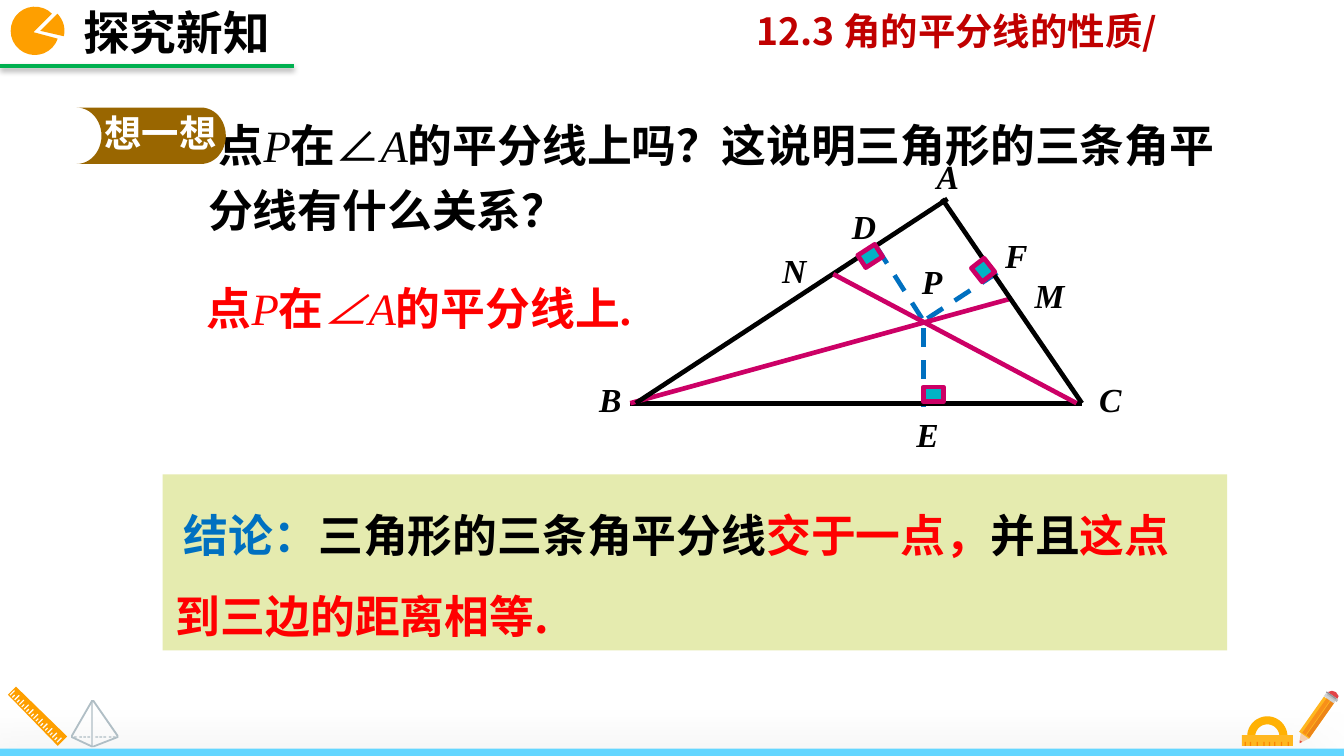
"""Build the lesson slide on the angle bisectors of a triangle."""
from math import cos, radians, sin

from lxml import etree
from pptx import Presentation
from pptx.dml.color import RGBColor
from pptx.enum.dml import MSO_LINE
from pptx.enum.shapes import MSO_CONNECTOR, MSO_SHAPE
from pptx.enum.text import MSO_ANCHOR, MSO_AUTO_SIZE, PP_ALIGN
from pptx.oxml.ns import qn
from pptx.util import Pt

PX = 9144
RECT, STORAGE = MSO_SHAPE.RECTANGLE, MSO_SHAPE.FLOWCHART_STORED_DATA
STRAIGHT, DASH = MSO_CONNECTOR.STRAIGHT, MSO_LINE.DASH
LEFT, TOP, FIXED = PP_ALIGN.LEFT, MSO_ANCHOR.TOP, MSO_AUTO_SIZE.NONE
SANS, SERIF = "Noto Sans CJK SC", "Times New Roman"
BLACK, RED, BLUE, PINK = "000000", "FF0000", "0070C0", "CC0066"
ORANGE, GREY, AMBER = "FE9F00", "B0BEC5", "FFB720"


def paint(shape, fill, edge=None):
    shape.shadow.inherit = False
    shape.fill.solid()
    shape.fill.fore_color.rgb = RGBColor.from_string(fill)
    if edge:
        shape.line.color.rgb = RGBColor.from_string(edge)
        shape.line.width = Pt(2.5)
    else:
        shape.line.fill.background()


def write(box, size, runs, wrap=True, spacing=1.0, indent=0):
    frame = box.text_frame
    frame.word_wrap, frame.auto_size, frame.vertical_anchor = wrap, FIXED, TOP
    paragraph = frame.paragraphs[0]
    paragraph.alignment, paragraph.line_spacing = LEFT, spacing
    paragraph._p.get_or_add_pPr().set("indent", str(indent * PX))
    for text, font, color, style in runs:
        run = paragraph.add_run()
        run.text = text
        run.font.size, run.font.name = Pt(size), font
        run.font.bold, run.font.italic = "b" in style, "i" in style
        run.font.color.rgb = RGBColor.from_string(color)
        etree.SubElement(run._r.get_or_add_rPr(), qn("a:ea"), typeface=SANS)


prs = Presentation()
prs.slide_width = 1000 * PX
prs.slide_height = prs.slide_width * 9 // 16
slide = prs.slides.add_slide(prs.slide_layouts[5])
shapes = slide.shapes

footer = shapes.add_shape(RECT, 0, 557 * PX, 1000 * PX, 6 * PX)
paint(footer, "63D6FF")

arcs = []
for cx, cy, radius, start, end in [
    (943, 548, 15, 180, 360), (943, 548, 9, 360, 180),
    (26, 23, 18, -45, -341), (30, 23, 18, -45, 13),
]:
    angles = [radians(start + (end - start) * step / 24) for step in range(25)]
    arcs.append([(cx + radius * cos(a), cy + radius * sin(a)) for a in angles])
protractor_outer, protractor_inner, pie_body, pie_slice = arcs

ruler = [[(12, 511), (6, 517), (43, 555), (50, 548)]]
for mark in range(21):
    x, y = 7 + 1.75 * mark, 517 + 1.75 * mark
    reach = 2 if mark % 2 else 3.5
    ruler.append([(x, y), (x + reach, y - reach),
                  (x + reach + 0.8, y - reach + 0.8), (x + 0.8, y + 0.8)])
pyramid = [
    [(68, 521), (70, 521), (88, 547), (88, 549), (70, 556), (68, 556), (53, 549), (53, 547)],
    [(69, 522), (87, 548), (69, 555), (54, 548)],
]
pencil_wood = [(967, 551), (968, 551), (969, 552), (975, 549), (974, 547),
               (972, 548), (972, 546), (970, 546), (970, 544), (968, 544)]
for contours, color in [
    ([protractor_outer + protractor_inner], "FFB103"),
    ([[(967, 551), (967, 553), (969, 552), (968, 551)]], "E74C3C"),
    ([pencil_wood], "F4CFB2"),
    ([[(994, 515), (991, 514), (988, 515), (995, 520), (996, 518)]], "E24348"),
    (ruler, ORANGE),
    (pyramid, GREY),
    ([pie_body + [(25, 24)], pie_slice + [(30, 23)]], ORANGE),
]:
    outline = None
    for contour in contours:
        points = [(x * PX, y * PX) for x, y in contour]
        if outline is None:
            outline = shapes.build_freeform(*points[0], scale=1.0)
        else:
            outline.move_to(*points[0])
        outline.add_line_segments(points[1:], close=True)
    paint(outline.convert_to_shape(), color)

bars = [
    (924, 547, 38, 8, 0, AMBER),
    (975, 518, 9, 32, 35.2, AMBER),
    (981, 519, 3, 32, 35.2, "ED8518"),
    (978, 517, 3, 32, 35.2, "F89019"),
    (985, 518, 9, 3, 35.2, "D1D3D4"),
    (987, 518, 9, 2, 35.2, "BCBEC0"),
    (986, 517, 9, 1, 35.2, "939598"),
    (68, 521, 1, 35, 0, GREY),
]
bars += [(round(926 + 4.5 * tick), 552, 1, 3, 0, "FB8501") for tick in range(8)]
bars += [(x, 548, 2, 1, 0, GREY) for x in (55, 59, 62, 65, 71, 74, 77, 81, 84)]
for x, y, width, height, turn, color in bars:
    bar = shapes.add_shape(RECT, x * PX, y * PX, width * PX, height * PX)
    bar.rotation = turn
    paint(bar, color)

heading = shapes.title
heading.left, heading.top, heading.width, heading.height = 52 * PX, -2 * PX, 160 * PX, 52 * PX
write(heading, 25, [("探究新知", SERIF, BLACK, "b")], wrap=False)

chapter = shapes.add_textbox(553 * PX, 1 * PX, 331 * PX, 44 * PX)
write(chapter, 20, [("12.3 角的平分线的性质/", SANS, "C00000", "b")], wrap=False)

question = shapes.add_textbox(145 * PX, 75 * PX, 780 * PX, 107 * PX)
write(question, 24, [
    ("点", SANS, BLACK, "b"), ("P", SERIF, BLACK, "i"), ("在", SANS, BLACK, "b"),
    ("∠", SERIF, BLACK, ""), ("A", SERIF, BLACK, "i"),
    ("的平分线上吗？这说明三角形的三条角平分线有什么关系？", SANS, BLACK, "b"),
], spacing=1.2, indent=8)

answer = shapes.add_textbox(144 * PX, 204 * PX, 356 * PX, 50 * PX)
write(answer, 24, [
    ("点", SERIF, RED, "b"), ("P", SERIF, RED, "i"), ("在", SERIF, RED, "b"),
    ("∠A", SERIF, RED, "i"), ("的平分线上.", SERIF, RED, "b"),
])

conclusion = shapes.add_shape(RECT, 121 * PX, 353 * PX, 792 * PX, 131 * PX)
paint(conclusion, "E5EBAF")
write(conclusion, 24, [
    ("结论：", SANS, BLUE, "b"), ("三角形的三条角平分线", SANS, BLACK, "b"),
    ("交于一点，", SANS, RED, "b"), ("并且", SANS, BLACK, "b"),
    ("这点到三边的距离相等.", SANS, RED, "b"),
], spacing=1.5, indent=6)

for x1, y1, x2, y2, color, weight, dash in [
    (687, 244, 687, 303, BLUE, 2.5, DASH),
    (686, 237, 653, 185, BLUE, 2.5, DASH),
    (690, 237, 742, 203, BLUE, 2.5, DASH),
    (469, 300, 805, 300, BLACK, 2.5, None),
    (469, 300, 753, 222, PINK, 2.5, None),
    (473, 300, 705, 148, BLACK, 2.5, None),
    (701, 148, 805, 300, BLACK, 2.5, None),
    (620, 204, 801, 300, PINK, 2.5, None),
    (0, 49, 219, 49, "00B050", 2, None),
]:
    segment = shapes.add_connector(STRAIGHT, x1 * PX, y1 * PX, x2 * PX, y2 * PX)
    segment.line.color.rgb = RGBColor.from_string(color)
    segment.line.width, segment.line.dash_style = Pt(weight), dash
    etree.SubElement(segment._element.spPr, qn("a:effectLst"))
heading_rule = segment

for letter, x, y in [
    ("A", 687, 111), ("B", 436, 277), ("C", 808, 277), ("D", 624, 148), ("E", 672, 303),
    ("F", 738, 170), ("P", 676, 189), ("N", 572, 181), ("M", 760, 200),
]:
    vertex = shapes.add_textbox(x * PX, y * PX, 49 * PX, 40 * PX)
    write(vertex, 18, [(letter, SERIF, BLACK, "bi")])

for x, y, width, height, turn in [
    (640, 185, 15, 11, 327), (687, 288, 15, 11, 0), (725, 195, 13, 12, 52),
]:
    right_angle = shapes.add_shape(RECT, x * PX, y * PX, width * PX, height * PX)
    right_angle.rotation = turn
    paint(right_angle, "02B3C5", PINK)

badge = shapes.add_shape(STORAGE, 57 * PX, 80 * PX, 111 * PX, 42 * PX)
badge.rotation = 180
paint(badge, "996600")
prompt = shapes.add_textbox(68 * PX, 77 * PX, 156 * PX, 44 * PX)
write(prompt, 20, [("想一想", SANS, "FFFFFF", "b")])

for caster, opacity, blur, distance, direction in [
    (footer, 50, 35, 20, 135), (heading_rule, 38, 3.1, 1.6, 90),
]:
    effects = caster._element.spPr.find(qn("a:effectLst"))
    shadow = etree.SubElement(effects, qn("a:outerShdw"), blurRad=str(Pt(blur)),
                              dist=str(Pt(distance)), dir=str(direction * 60000))
    tint = etree.SubElement(shadow, qn("a:srgbClr"), val=BLACK)
    etree.SubElement(tint, qn("a:alpha"), val=str(opacity * 1000))

prs.save("out.pptx")
